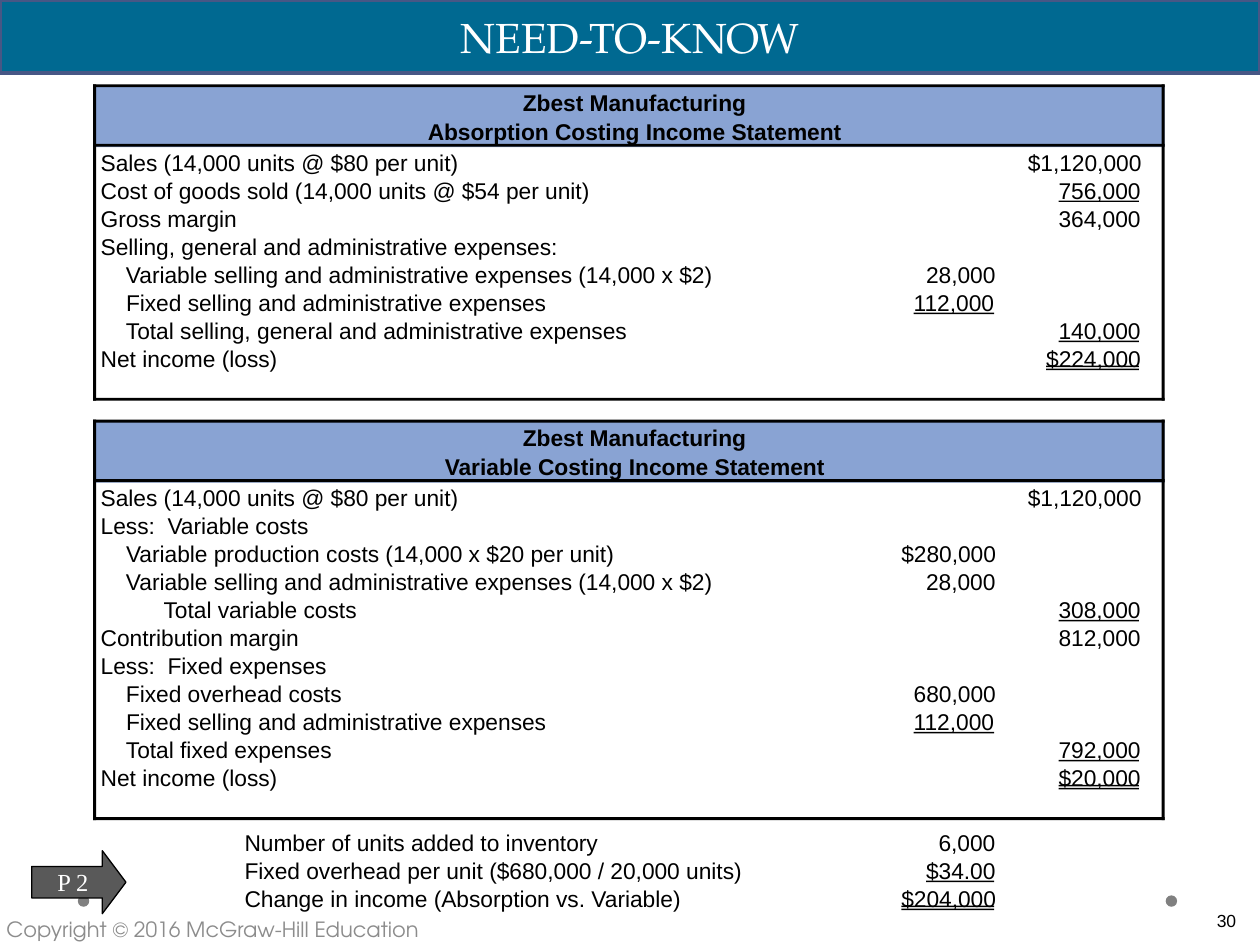
from dataclasses import dataclass

from pptx import Presentation
from pptx import util as u
from pptx.dml.color import RGBColor
from pptx.enum import shapes, text


@dataclass(frozen=True)
class Theme:
    banner: str = "006991"
    banner_edge: str = "475785"
    band: str = "89A3D3"
    arrow: str = "595959"
    dot: str = "808080"
    muted: str = "8C8C8C"
    ink: str = "000000"
    paper: str = "FFFFFF"
    body_font: str = "Arial"
    title_font: str = "TeX Gyre Pagella"
    copyright_font: str = "TeX Gyre Adventor"
    arrow_font: str = "Times New Roman"
    title_size: int = 24
    arrow_size: int = 14
    body_size: int = 13
    copyright_size: int = 12
    page_size: int = 10


@dataclass(frozen=True)
class Row:
    label: str
    inner: str = ""
    outer: str = ""
    indent: int = 0
    rules: int = 0  # lines under the amount


@dataclass(frozen=True)
class Statement:
    top: float
    title: str
    rows: tuple[Row, ...]


THEME = Theme()

# Grid, in centimetres
PITCH = 2.54 * 16 / 72  # a 16-point line
LABEL_LEFTS = (2.03, 2.54, 3.3)
NOTE_LEFT, NOTE_TOP = 4.93, 16.71
INNER_RIGHT, OUTER_RIGHT = 20.04, 22.96
FRAME_LEFT, FRAME_RIGHT, FRAME_LINE = 1.88, 23.48, 0.06
HEADING_CENTRE = 12.79
BAND_HEIGHT, ROWS_OFFSET = 1.24, 1.3
RULE_OFFSETS, RULE_LINE = (0.48, 0.42), 0.03

COMPANY = "Zbest Manufacturing"
SALES = Row("Sales (14,000 units @ $80 per unit)", outer="$1,120,000")
VARIABLE_SELLING = Row("Variable selling and administrative expenses (14,000 x $2)",
                       inner="28,000", indent=1)
FIXED_SELLING = Row("Fixed selling and administrative expenses",
                    inner="112,000", indent=1, rules=1)

STATEMENTS = (
    Statement(8.46, "Variable Costing Income Statement", (
        SALES,
        Row("Less:  Variable costs"),
        Row("Variable production costs (14,000 x $20 per unit)", inner="$280,000", indent=1),
        VARIABLE_SELLING,
        Row("Total variable costs", outer="308,000", indent=2, rules=1),
        Row("Contribution margin", outer="812,000"),
        Row("Less:  Fixed expenses"),
        Row("Fixed overhead costs", inner="680,000", indent=1),
        FIXED_SELLING,
        Row("Total fixed expenses", outer="792,000", indent=1, rules=1),
        Row("Net income (loss)", outer="$20,000", rules=2),
    )),
    Statement(1.7, "Absorption Costing Income Statement", (
        SALES,
        Row("Cost of goods sold (14,000 units @ $54 per unit)", outer="756,000", rules=1),
        Row("Gross margin", outer="364,000"),
        Row("Selling, general and administrative expenses:"),
        VARIABLE_SELLING,
        FIXED_SELLING,
        Row("Total selling, general and administrative expenses",
            outer="140,000", indent=1, rules=1),
        Row("Net income (loss)", outer="$224,000", rules=2),
    )),
)

INVENTORY_NOTES = (
    Row("Number of units added to inventory", inner="6,000"),
    Row("Fixed overhead per unit ($680,000 / 20,000 units)", inner="$34.00", rules=1),
    Row("Change in income (Absorption vs. Variable)", inner="$204,000", rules=2),
)


def write(frame, words: str, *, size: int = THEME.body_size, font: str = THEME.body_font,
          color: str = THEME.ink, bold: bool = False, align=text.PP_ALIGN.LEFT,
          anchor=text.MSO_ANCHOR.TOP, wrap: bool = True,
          insets: tuple[float, ...] = (0, 0, 0, 0)) -> None:
    frame.word_wrap = wrap
    frame.vertical_anchor = anchor
    (frame.margin_left, frame.margin_top,
     frame.margin_right, frame.margin_bottom) = map(u.Cm, insets)
    line = frame.paragraphs[0]
    line.alignment = align
    run = line.add_run()
    run.text = words
    run.font.size = u.Pt(size)
    run.font.name = font
    run.font.bold = bold
    run.font.color.rgb = RGBColor.from_string(color)


def add_words(slide, words: str, left: float, top: float, width: float,
              height: float = 0.6, **style) -> None:
    box = slide.shapes.add_textbox(*map(u.Cm, (left, top, width, height)))
    write(box.text_frame, words, **style)


def add_block(slide, left: float, top: float, width: float, height: float,
              fill: str = THEME.ink, preset=shapes.MSO_SHAPE.RECTANGLE,
              edge: str = "", edge_width: float = 0):
    block = slide.shapes.add_shape(preset, *map(u.Cm, (left, top, width, height)))
    block.shadow.inherit = False
    block.fill.solid()
    block.fill.fore_color.rgb = RGBColor.from_string(fill)
    if edge:
        block.line.color.rgb = RGBColor.from_string(edge)
        block.line.width = u.Pt(edge_width)
    else:
        block.line.fill.background()
    return block


def add_amount(slide, amount: str, right: float, top: float, rules: int) -> None:
    width = sum(0.12 if mark in ",." else 0.25 for mark in amount)
    left = right - width
    add_words(slide, amount, left, top, width + 0.2)
    for offset in RULE_OFFSETS[:rules]:
        add_block(slide, left, top + offset, width, RULE_LINE)


def add_rows(slide, rows: tuple[Row, ...], top: float, lefts: tuple[float, ...]) -> None:
    for index, row in enumerate(rows):
        row_top = top + index * PITCH
        add_words(slide, row.label, lefts[row.indent], row_top,
                  0.205 * len(row.label) + 0.35)
        for amount, right in ((row.inner, INNER_RIGHT), (row.outer, OUTER_RIGHT)):
            if amount:
                add_amount(slide, amount, right, row_top, row.rules)


def add_statement(slide, statement: Statement) -> None:
    top, span = statement.top, FRAME_RIGHT - FRAME_LEFT
    height = ROWS_OFFSET + PITCH * (len(statement.rows) + 1)
    add_block(slide, FRAME_LEFT + 0.04, top + 0.03, span - 0.04, BAND_HEIGHT, THEME.band)
    add_rows(slide, statement.rows, top + ROWS_OFFSET, LABEL_LEFTS)
    for heading, offset in ((COMPANY, 0.08), (statement.title, 0.67)):
        width = 0.24 * len(heading)
        add_words(slide, heading, HEADING_CENTRE - width / 2, top + offset, width,
                  bold=True, align=text.PP_ALIGN.CENTER)
    # Frame
    for left in (FRAME_LEFT, FRAME_RIGHT - FRAME_LINE):
        add_block(slide, left, top, FRAME_LINE, height)
    for offset in (0, 1.2, height - FRAME_LINE):
        add_block(slide, FRAME_LEFT, top + offset, span, FRAME_LINE)


def main() -> None:
    deck = Presentation()
    deck.slide_width, deck.slide_height = u.Cm(25.4), u.Cm(19.05)
    slide = deck.slides.add_slide(deck.slide_layouts[6])

    # Footer
    for dot_left in (23.5, 1.57):
        add_block(slide, dot_left, 18.05, 0.23, 0.23, THEME.dot, shapes.MSO_SHAPE.OVAL)
    add_words(slide, "Copyright © 2016 McGraw-Hill Education", 0, 18.42, 10.16, 0.64,
              size=THEME.copyright_size, font=THEME.copyright_font, color=THEME.muted,
              anchor=text.MSO_ANCHOR.MIDDLE, insets=(0.13, 0.13, 0.25, 0.13))

    # Banner
    banner = add_block(slide, 0, 0, 25.4, 1.48, THEME.banner,
                       edge=THEME.banner_edge, edge_width=2.25)
    write(banner.text_frame, "NEED-TO-KNOW", size=THEME.title_size, font=THEME.title_font,
          color=THEME.paper, align=text.PP_ALIGN.CENTER, anchor=text.MSO_ANCHOR.MIDDLE)

    # Income statements and the change between them
    for statement in STATEMENTS:
        add_statement(slide, statement)
    add_rows(slide, INVENTORY_NOTES, NOTE_TOP, (NOTE_LEFT,))

    # Page number and objective arrow
    add_words(slide, "30", 23.7, 18.21, 1.47, 0.64, size=THEME.page_size,
              align=text.PP_ALIGN.RIGHT, insets=(0.25, 0.13, 0.25, 0.13))
    objective = add_block(slide, 0.64, 17.15, 1.9, 1.27, THEME.arrow,
                          shapes.MSO_SHAPE.RIGHT_ARROW, THEME.ink, 0.75)
    objective.adjustments[0], objective.adjustments[1] = 0.5, 0.375
    write(objective.text_frame, "P 2", size=THEME.arrow_size, font=THEME.arrow_font,
          color=THEME.paper, align=text.PP_ALIGN.CENTER,
          anchor=text.MSO_ANCHOR.MIDDLE, wrap=False)

    deck.save("out.pptx")


if __name__ == "__main__":
    main()
